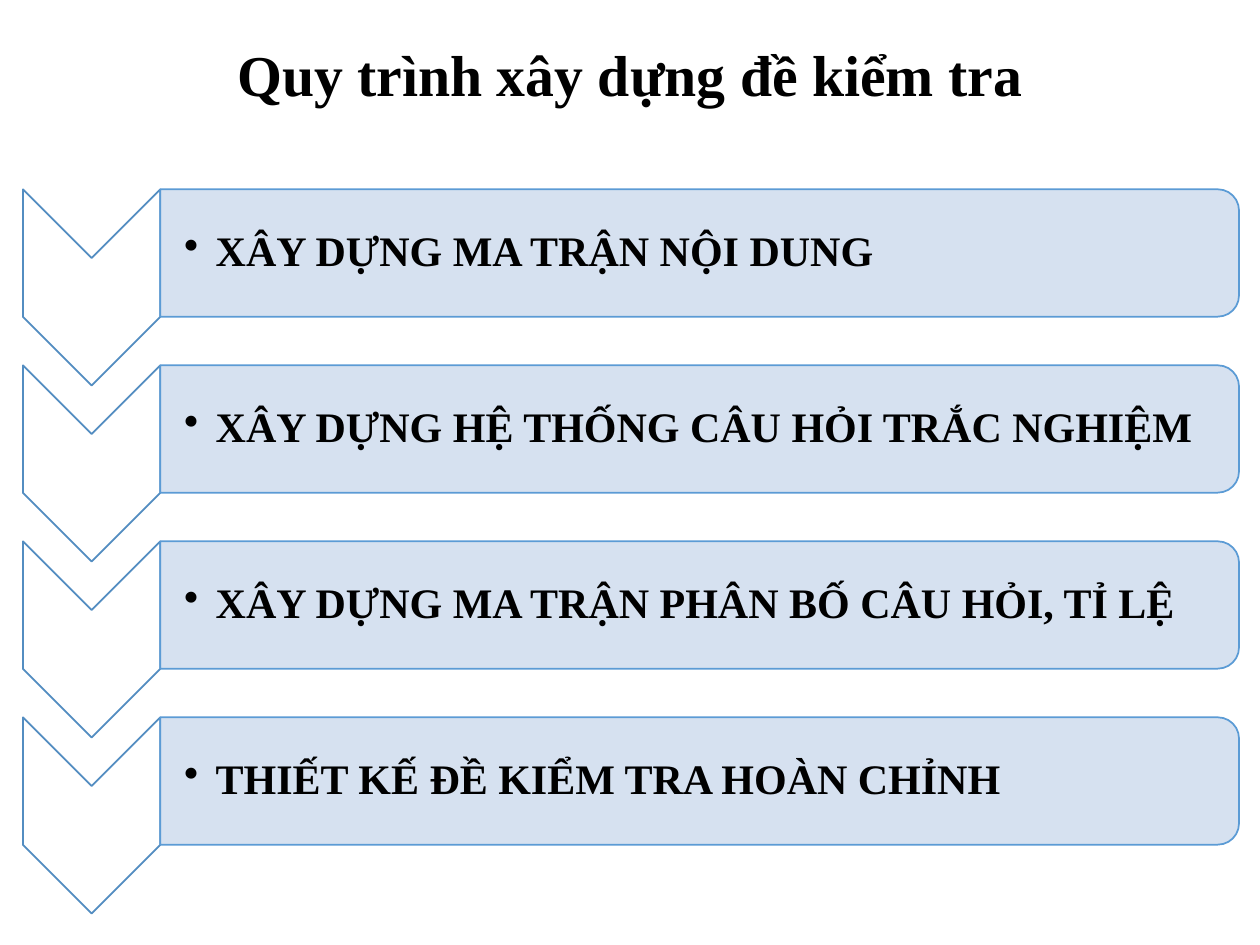
from lxml import etree
from pptx import Presentation
from pptx import util as u
from pptx.dml.color import RGBColor
from pptx.enum import shapes, text
from pptx.oxml import ns

BLACK = RGBColor(0x00, 0x00, 0x00)
WHITE = RGBColor(0xFF, 0xFF, 0xFF)
PALE = RGBColor(0xD2, 0xDE, 0xEF)
BLUE = RGBColor(0x5B, 0x9B, 0xD5)
STEEL = RGBColor(0x53, 0x8D, 0xC1)

TITLE = "Quy trình xây dựng đề kiểm tra"
STEPS = [
    "XÂY DỰNG MA TRẬN NỘI DUNG",
    "XÂY DỰNG HỆ THỐNG CÂU HỎI TRẮC NGHIỆM",
    "XÂY DỰNG MA TRẬN PHÂN BỐ CÂU HỎI, TỈ LỆ",
    "THIẾT KẾ ĐỀ KIỂM TRA HOÀN CHỈNH",
]
TOP, PITCH = 108.2, 100.57
LEFT, SPLIT, RIGHT = 13.1, 91.6, 708
BAR, ARROW = 72.8, 112.1


class Deck:
    font = "Times New Roman"
    kind = shapes.MSO_SHAPE

    def __init__(self, slide):
        self.slide = slide

    def turned(self, kind, left, top, wide, high, fill, line):
        x = left + (wide - high) / 2
        y = top + (high - wide) / 2
        shape = self.slide.shapes.add_shape(
            kind, u.Pt(x), u.Pt(y), u.Pt(high), u.Pt(wide))
        shape.rotation = 90
        shape.shadow.inherit = False
        shape.fill.solid()
        shape.fill.fore_color.rgb = fill
        shape.line.color.rgb = line
        shape.line.width = u.Pt(1)
        return shape

    def arrow(self, top):
        self.turned(self.kind.CHEVRON, LEFT, top, SPLIT - LEFT, ARROW,
                    WHITE, STEEL)

    def bar(self, top):
        shape = self.turned(self.kind.ROUND_2_SAME_RECTANGLE, SPLIT, top,
                            RIGHT - SPLIT, BAR, PALE, BLUE)
        color = shape.fill._xPr.find(".//" + ns.qn("a:srgbClr"))
        etree.SubElement(color, ns.qn("a:alpha"), val="90000")

    def label(self, words, left, top, wide, high, size, inset):
        box = self.slide.shapes.add_textbox(
            u.Pt(left), u.Pt(top), u.Pt(wide), u.Pt(high))
        frame = box.text_frame
        frame.text = words
        frame.word_wrap = True
        frame.vertical_anchor = text.MSO_ANCHOR.MIDDLE
        (frame.margin_left, frame.margin_top,
         frame.margin_right, frame.margin_bottom) = map(u.Pt, inset)
        para = frame.paragraphs[0]
        para.line_spacing = 0.9
        font = para.runs[0].font
        font.name = self.font
        font.size = u.Pt(size)
        font.bold = True
        font.color.rgb = BLACK
        return para

    def title(self, words):
        para = self.label(words, 49.5, 5.8, 621, 77, 33, (7.2, 3.6, 7.2, 3.6))
        para.alignment = text.PP_ALIGN.CENTER

    def bullet(self, words, top):
        para = self.label(words, SPLIT, top + 3.6, RIGHT - SPLIT - 3.6,
                          BAR - 7.2, 24, (13.7, 1.2, 1.2, 1.2))
        para.level = 1
        para.space_after = u.Pt(3.6)
        props = para._p.get_or_add_pPr()
        props.set("marL", str(u.Pt(18)))
        props.set("indent", str(u.Pt(-18)))
        etree.SubElement(props, ns.qn("a:buChar"), char="•")

    def step(self, words, top):
        self.arrow(top)
        self.bar(top)
        self.bullet(words, top)


def main():
    show = Presentation()
    show.slide_width, show.slide_height = u.Pt(720), u.Pt(540)
    deck = Deck(show.slides.add_slide(show.slide_layouts[6]))
    deck.title(TITLE)
    for i, words in enumerate(STEPS):
        deck.step(words, TOP + i * PITCH)
    show.save("out.pptx")


if __name__ == "__main__":
    main()
